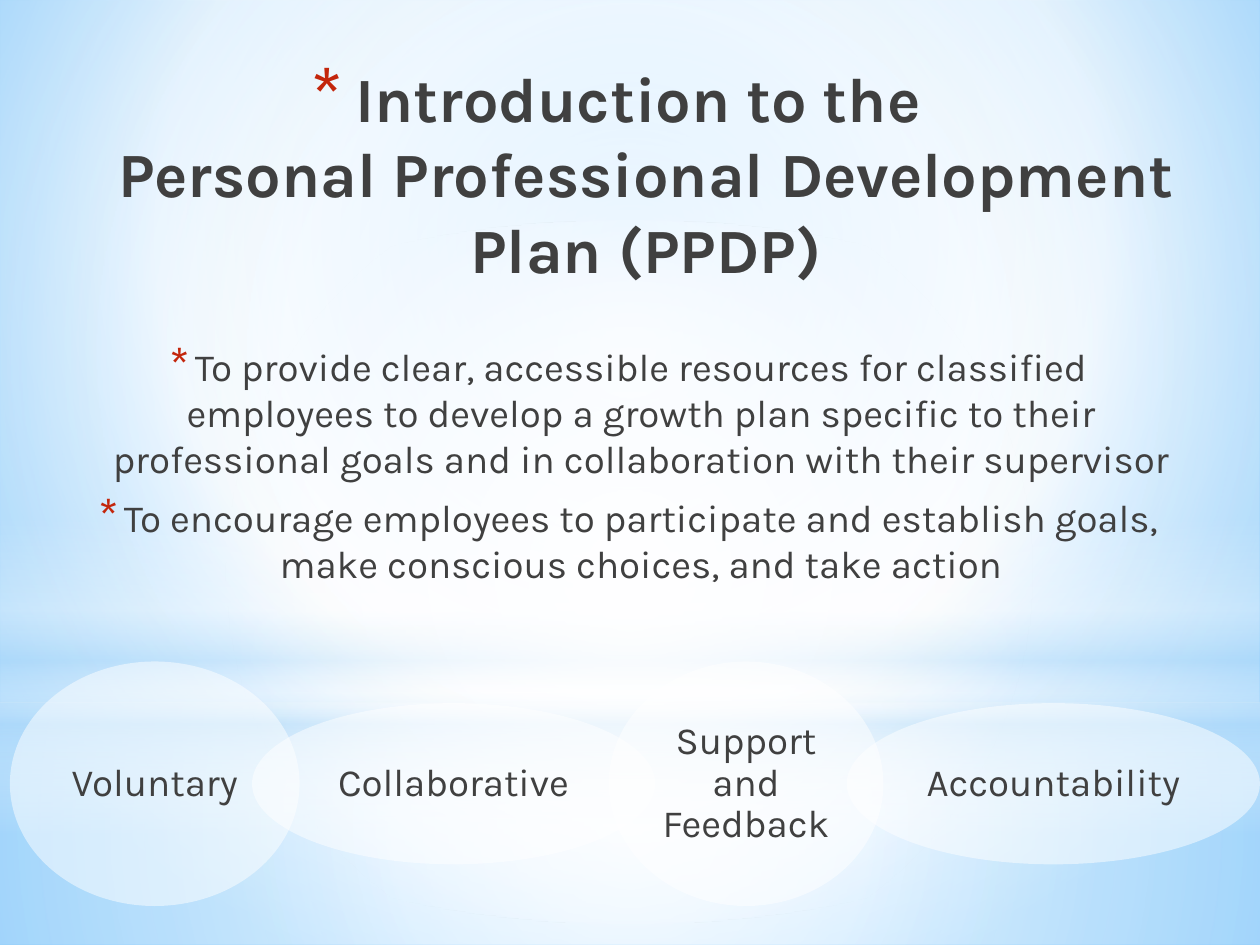
import lxml.etree
import pptx
import pptx.dml.color
import pptx.enum.shapes
import pptx.enum.text
import pptx.oxml.ns
import pptx.util

Cm, Pt = pptx.util.Cm, pptx.util.Pt
qn = pptx.oxml.ns.qn
SHAPE = pptx.enum.shapes.MSO_SHAPE
ANCHOR = pptx.enum.text.MSO_ANCHOR
CENTER = pptx.enum.text.PP_ALIGN.CENTER
INK, BULLET_RED = "404040", "C3260C"


def color(hex_value):
    return pptx.dml.color.RGBColor.from_string(hex_value)


def set_gradient(element, stops, focus=None):
    """Stops are (position %, colour, opacity %); focus is a circle's l, t, r, b, else top-down."""
    grad = element.find(".//" + qn("a:gradFill"))
    for child in list(grad):
        grad.remove(child)
    stop_list = lxml.etree.SubElement(grad, qn("a:gsLst"))
    for position, hex_value, opacity in stops:
        stop = lxml.etree.SubElement(stop_list, qn("a:gs"), pos=str(position * 1000))
        srgb = lxml.etree.SubElement(stop, qn("a:srgbClr"), val=hex_value)
        lxml.etree.SubElement(srgb, qn("a:alpha"), val=str(opacity * 1000))
    if focus:
        circle = lxml.etree.SubElement(grad, qn("a:path"), {"path": "circle"})
        sides = {side: str(share * 1000) for side, share in zip("ltrb", focus)}
        lxml.etree.SubElement(circle, qn("a:fillToRect"), sides)
    else:
        lxml.etree.SubElement(grad, qn("a:lin"), ang="5400000", scaled="0")


prs = pptx.Presentation()
prs.slide_width, prs.slide_height = Cm(25.4), Cm(19.05)
slide = prs.slides.add_slide(prs.slide_layouts[1])

# Sky background
slide.background.fill.gradient()
set_gradient(slide.element,
             [(0, "9ED5FF", 100), (60, "FFFFFF", 100), (100, "5BB9FF", 100)],
             (20, 10, 20, 60))

# Ground, sky, horizon and central glow: preset, top, height, stops, focus
middle = (50, 50, 50, 50)
scenery = [
    (SHAPE.RECTANGLE, 14.17, 4.88,
     [(0, "FFFFFF", 91), (37, "FFFFFF", 76), (100, "B4DCFA", 79)], middle),
    (SHAPE.RECTANGLE, 0, 14.17,
     [(0, "FFFFFF", 89), (48, "FFFFFF", 62), (100, "B4DCFA", 79)], middle),
    (SHAPE.RECTANGLE, 10.46, 6.35,
     [(0, "FFFFFF", 0), (29, "FFFFFF", 30), (45, "B4DCFA", 40),
      (55, "FFFFFF", 26), (65, "B4DCFA", 60), (100, "FFFFFF", 0)], None),
    (SHAPE.OVAL, 4.45, 14.17, [(0, "FFFFFF", 100), (56, "FFFFFF", 0)], middle),
]
for preset, top, height, stops, focus in scenery:
    layer = slide.shapes.add_shape(preset, 0, Cm(top), prs.slide_width, Cm(height))
    layer.shadow.inherit = False
    layer.line.fill.background()
    layer.fill.gradient()
    set_gradient(layer.element, stops, focus)

# Title and goals, in front of the scenery
title, goals = slide.shapes.title, slide.placeholders[1]
title.left, title.top, title.width, title.height = Cm(-0.05), Cm(1.07), Cm(25.25), Cm(3.18)
goals.left, goals.top, goals.width, goals.height = Cm(1.07), Cm(6.78), Cm(23.06), Cm(6.55)
title.text_frame.text = "Introduction to the \vPersonal Professional Development Plan (PPDP)"
goals.text_frame.text = (
    "To provide clear, accessible resources for classified employees to develop a growth plan "
    "specific to their professional goals and in collaboration with their supervisor\n"
    "To encourage employees to participate and establish goals, make conscious choices, "
    "and take action")

# Placeholder, size, bold, left margin, hanging indent, bullet size, space before and after
for holder, size, bold, margin, hanging, bullet_size, before, after in [
        (title, 36, True, 0.89, 0.89, 128, 0, 0),
        (goals, 22, False, 0.64, 0.51, 130, 4.4, 3)]:
    holder.element.getparent().append(holder.element)
    frame = holder.text_frame
    frame.word_wrap = True
    frame.auto_size = pptx.enum.text.MSO_AUTO_SIZE.NONE
    frame.vertical_anchor = ANCHOR.TOP
    for paragraph in frame.paragraphs:
        paragraph.alignment = CENTER
        paragraph.space_before, paragraph.space_after = Pt(before), Pt(after)
        props = paragraph._p.get_or_add_pPr()
        props.set("marL", str(Cm(margin)))
        props.set("indent", str(-Cm(hanging)))
        bullet_color = lxml.etree.SubElement(props, qn("a:buClr"))
        lxml.etree.SubElement(bullet_color, qn("a:srgbClr"), val=BULLET_RED)
        lxml.etree.SubElement(props, qn("a:buSzPct"), val=str(bullet_size * 1000))
        lxml.etree.SubElement(props, qn("a:buFont"), typeface="Karla")
        lxml.etree.SubElement(props, qn("a:buChar"), char="*")
        paragraph.font.name, paragraph.font.size = "Karla", Pt(size)
        paragraph.font.bold = bold
        paragraph.font.color.rgb = color(INK)

# Overlapping principles on one centre line: label, left, width, height
centre_line = 15.8
for label, left, width, height in [
        ("Voluntary", 0.2, 5.84, 4.93),
        ("Collaborative", 5.08, 8.13, 3.25),
        ("Accountability", 17.07, 8.33, 3.25),
        ("Support and Feedback", 12.27, 5.54, 4.93)]:
    principle = slide.shapes.add_shape(
        SHAPE.OVAL, Cm(left), Cm(centre_line - height / 2), Cm(width), Cm(height))
    principle.shadow.inherit = False
    principle.line.fill.background()
    principle.fill.solid()
    principle.fill.fore_color.rgb = color("FFFFFF")
    white = principle.element.spPr.find(qn("a:solidFill")).find(qn("a:srgbClr"))
    lxml.etree.SubElement(white, qn("a:alpha"), val="50000")
    frame = principle.text_frame
    frame.word_wrap = True
    frame.vertical_anchor = ANCHOR.MIDDLE
    frame.margin_left = frame.margin_right = Cm(0.15)
    frame.margin_top = frame.margin_bottom = Cm(0.08)
    frame.text = label
    paragraph = frame.paragraphs[0]
    paragraph.alignment = CENTER
    paragraph.line_spacing = 0.9
    paragraph.font.name, paragraph.font.size = "Karla", Pt(22)
    paragraph.font.color.rgb = color(INK)

prs.save("out.pptx")
